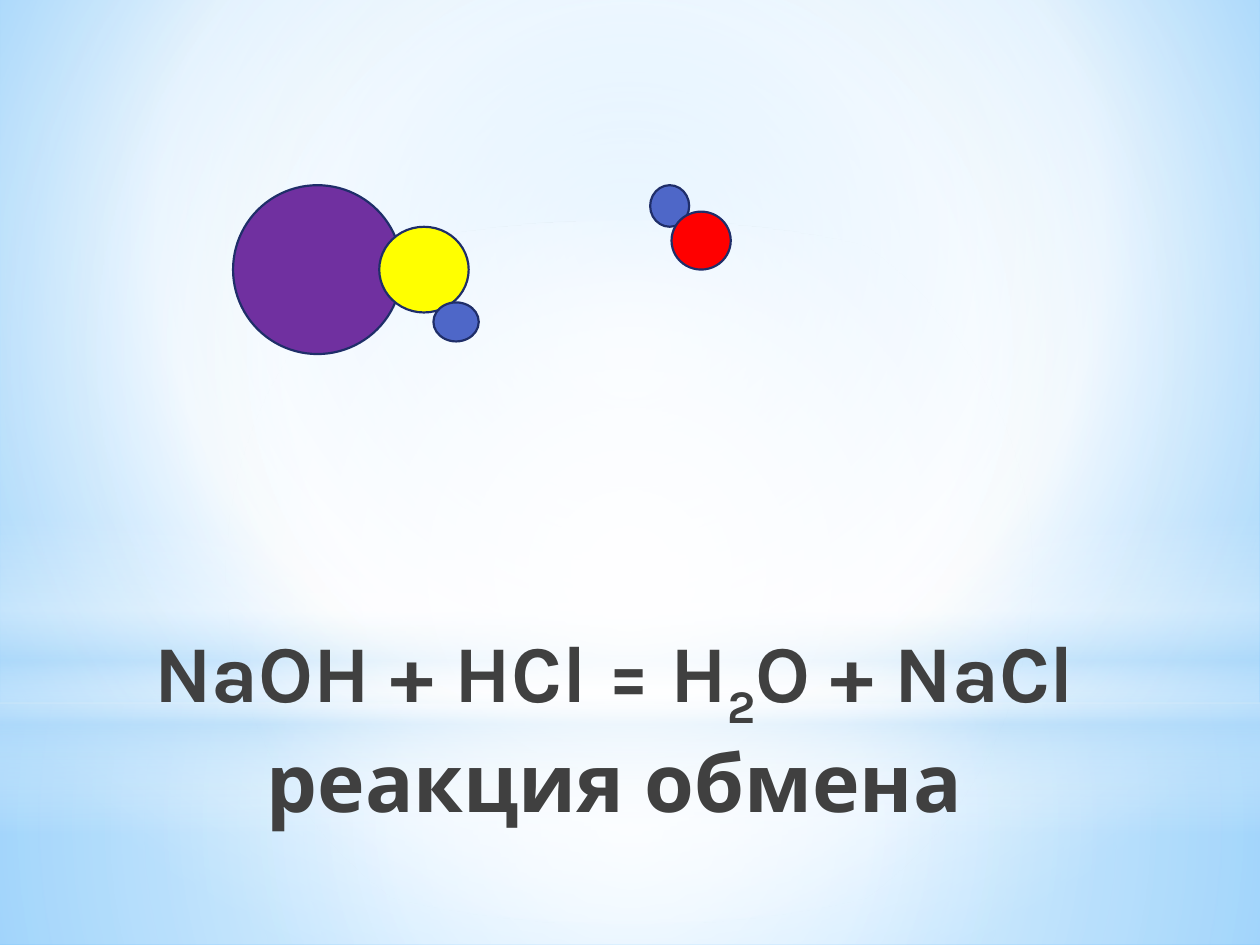
import lxml.etree
import pptx
import pptx.dml.color
import pptx.enum.shapes
import pptx.enum.text
import pptx.oxml
import pptx.oxml.ns
import pptx.util

Inches = pptx.util.Inches
RGBColor = pptx.dml.color.RGBColor
SHAPE = pptx.enum.shapes.MSO_SHAPE

WHITE = RGBColor(0xFF, 0xFF, 0xFF)
PALE_BLUE = RGBColor(0xB4, 0xDC, 0xFA)
SKY_BLUE = RGBColor(0x9E, 0xD5, 0xFF)
DEEP_SKY = RGBColor(0x5B, 0xB9, 0xFF)
DARK_GRAY = RGBColor(0x40, 0x40, 0x40)
NAVY = RGBColor(0x1F, 0x2E, 0x69)
PURPLE = RGBColor(0x70, 0x30, 0xA0)
YELLOW = RGBColor(0xFF, 0xFF, 0x00)
BLUE = RGBColor(0x4E, 0x67, 0xC8)
RED = RGBColor(0xFF, 0x00, 0x00)

# Gradient stops: position %, colour, opacity %
BACKGROUND_STOPS = [(0, SKY_BLUE, 100), (60, WHITE, 100), (100, DEEP_SKY, 100)]
CENTER = (50, 50, 50, 50)

# Backdrop: shape, box, stops, focus of a circular gradient (None is vertical)
BACKDROP = [
    (SHAPE.RECTANGLE, (0, 5.58, 10, 1.92),
     [(0, WHITE, 91), (37, WHITE, 76), (100, PALE_BLUE, 79)], CENTER),
    (SHAPE.RECTANGLE, (0, 0, 10, 5.58),
     [(0, WHITE, 89), (48, WHITE, 62), (100, PALE_BLUE, 79)], CENTER),
    (SHAPE.RECTANGLE, (0, 4.12, 10, 2.5),
     [(0, WHITE, 0), (29, WHITE, 30), (45, PALE_BLUE, 40), (55, WHITE, 26),
      (65, PALE_BLUE, 60), (100, WHITE, 0)], None),
    (SHAPE.OVAL, (0, 1.75, 10, 5.58), [(0, WHITE, 100), (56, WHITE, 0)], CENTER),
]

# Title lines as (text, is subscript)
TITLE_BOX = (0.67, 4.78, 8.41, 1.96)
TITLE_LINES = [
    [("NaOH + HCl = H", False), ("2", True), ("O + NaCl", False)],
    [("реакция обмена", False)],
]

# Atoms of the two molecules, from back to front
ATOMS = [
    ((1.85, 1.47, 1.34, 1.34), PURPLE),
    ((3.01, 1.8, 0.71, 0.68), YELLOW),
    ((3.44, 2.4, 0.36, 0.31), BLUE),
    ((5.16, 1.47, 0.31, 0.33), BLUE),
    ((5.33, 1.68, 0.47, 0.46), RED),
]


def set_gradient(properties, stops, focus):
    """Replace the solid fill in a properties element with a gradient."""
    stop_xml = "".join(
        f'<a:gs pos="{position * 1000}"><a:srgbClr val="{color}">'
        f'<a:alpha val="{opacity * 1000}"/></a:srgbClr></a:gs>'
        for position, color, opacity in stops)
    if focus:
        sides = " ".join(f'{side}="{value * 1000}"' for side, value in zip("ltrb", focus))
        direction = f'<a:path path="circle"><a:fillToRect {sides}/></a:path>'
    else:
        direction = '<a:lin ang="5400000" scaled="0"/>'
    gradient = pptx.oxml.parse_xml(
        f'<a:gradFill {pptx.oxml.ns.nsdecls("a")} rotWithShape="1">'
        f'<a:gsLst>{stop_xml}</a:gsLst>{direction}</a:gradFill>')
    solid = properties.find(pptx.oxml.ns.qn("a:solidFill"))
    properties.replace(solid, gradient)


def add_plain_shape(slide, kind, box, color):
    shape = slide.shapes.add_shape(kind, *map(Inches, box))
    shape.shadow.inherit = False
    shape.fill.solid()
    shape.fill.fore_color.rgb = color
    return shape


def add_run(paragraph, text, *, size=46, font="Karla", color=DARK_GRAY,
            bold=True, subscript=False):
    run = paragraph.add_run()
    run.text = text
    run.font.size = pptx.util.Pt(size)
    run.font.name = font
    run.font.bold = bold
    run.font.color.rgb = color
    if subscript:
        run.font._element.set("baseline", "-25000")


def main():
    presentation = pptx.Presentation()
    presentation.slide_width, presentation.slide_height = Inches(10), Inches(7.5)
    slide = presentation.slides.add_slide(presentation.slide_layouts[5])

    # Background and backdrop
    slide.background.fill.solid()
    background = slide._element.find(".//" + pptx.oxml.ns.qn("p:bgPr"))
    set_gradient(background, BACKGROUND_STOPS, (20, 10, 20, 60))
    for kind, box, stops, focus in BACKDROP:
        shape = add_plain_shape(slide, kind, box, WHITE)
        shape.line.fill.background()
        set_gradient(shape._element.spPr, stops, focus)

    # Title, brought in front of the backdrop
    title = slide.shapes.title
    slide.shapes._spTree.append(title._element)
    title.left, title.top, title.width, title.height = map(Inches, TITLE_BOX)
    frame = title.text_frame
    frame.word_wrap = True
    frame.auto_size = pptx.enum.text.MSO_AUTO_SIZE.NONE
    frame.vertical_anchor = pptx.enum.text.MSO_ANCHOR.MIDDLE
    paragraph = frame.paragraphs[0]
    paragraph.alignment = pptx.enum.text.PP_ALIGN.CENTER
    for index, line in enumerate(TITLE_LINES):
        if index:
            paragraph.add_line_break()
        for text, subscript in line:
            add_run(paragraph, text, subscript=subscript)

    # Molecules
    for box, color in ATOMS:
        atom = add_plain_shape(slide, SHAPE.OVAL, box, color)
        atom.line.color.rgb = NAVY
        atom.line.width = pptx.util.Pt(1.25)

    presentation.save("out.pptx")


if __name__ == "__main__":
    main()
